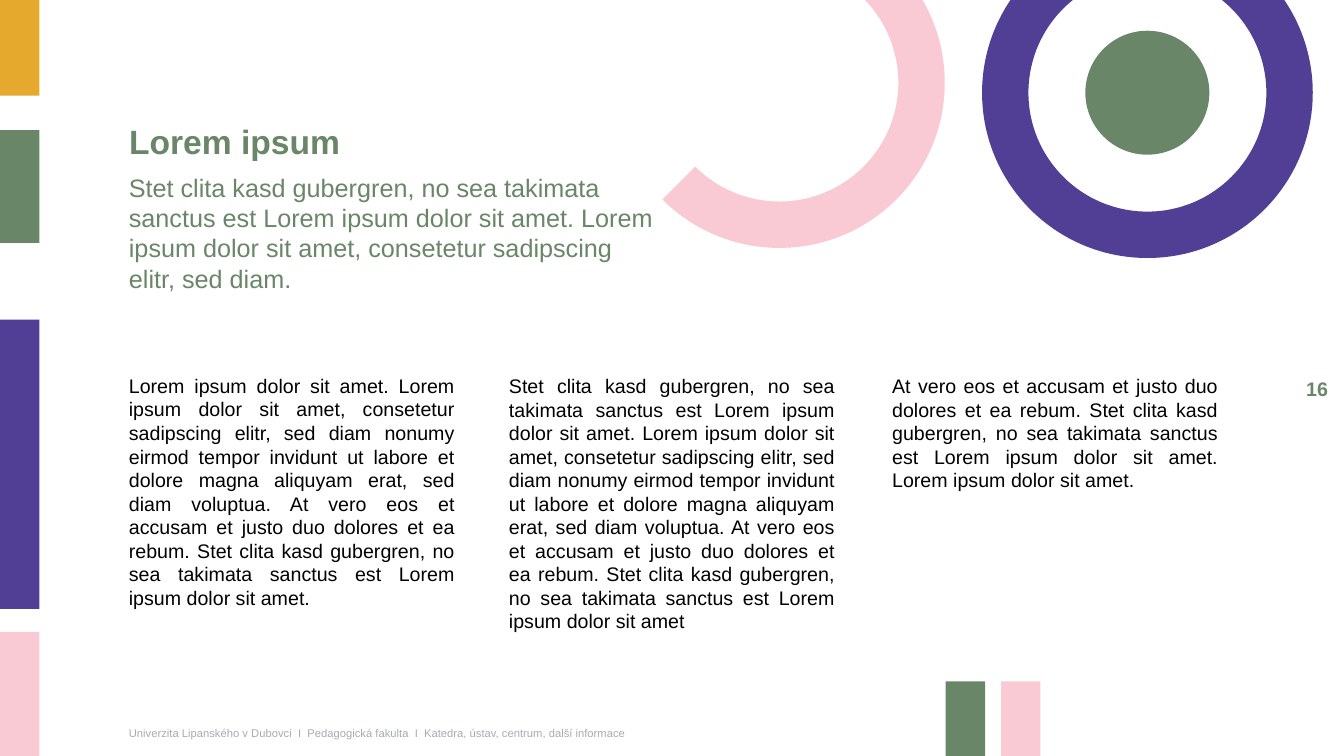
from math import asin, cos, pi, sin, tan

from lxml import etree
from pptx import Presentation
from pptx.dml.color import RGBColor
from pptx.enum.shapes import MSO_SHAPE
from pptx.enum.text import MSO_ANCHOR, MSO_AUTO_SIZE, PP_ALIGN
from pptx.oxml.ns import qn
from pptx.util import Inches, Pt

RECT, OVAL = MSO_SHAPE.RECTANGLE, MSO_SHAPE.OVAL
TOP, MIDDLE = MSO_ANCHOR.TOP, MSO_ANCHOR.MIDDLE
LEFT, RIGHT, JUSTIFY = PP_ALIGN.LEFT, PP_ALIGN.RIGHT, PP_ALIGN.JUSTIFY
NO_FIT = MSO_AUTO_SIZE.NONE

GREEN = RGBColor(0x6A, 0x86, 0x68)
PINK = RGBColor(0xF9, 0xCA, 0xD4)
PURPLE = RGBColor(0x51, 0x3F, 0x95)
GOLD = RGBColor(0xE5, 0xAA, 0x2D)
GREY = RGBColor(0xA9, 0xAB, 0xAE)
BLACK = RGBColor(0, 0, 0)

BAR_W = 0.39
RING_OUTER, RING_INNER = 1.64, 1.18

INTRO = ("Stet clita kasd gubergren, no sea takimata sanctus est Lorem ipsum "
         "dolor sit amet. Lorem ipsum dolor sit amet, consetetur sadipscing "
         "elitr, sed diam.")
COLUMNS = [
    (1.18, 2.46,
     "Lorem ipsum dolor sit amet. Lorem ipsum dolor sit amet, consetetur "
     "sadipscing elitr, sed diam nonumy eirmod tempor invidunt ut labore et "
     "dolore magna aliquyam erat, sed diam voluptua. At vero eos et accusam et "
     "justo duo dolores et ea rebum. Stet clita kasd gubergren, no sea takimata "
     "sanctus est Lorem ipsum dolor sit amet."),
    (4.95, 2.69,
     "Stet clita kasd gubergren, no sea takimata sanctus est Lorem ipsum dolor "
     "sit amet. Lorem ipsum dolor sit amet, consetetur sadipscing elitr, sed "
     "diam nonumy eirmod tempor invidunt ut labore et dolore magna aliquyam "
     "erat, sed diam voluptua. At vero eos et accusam et justo duo dolores et "
     "ea rebum. Stet clita kasd gubergren, no sea takimata sanctus est Lorem "
     "ipsum dolor sit amet"),
    (8.75, 1.28,
     "At vero eos et accusam et justo duo dolores et ea rebum. Stet clita kasd "
     "gubergren, no sea takimata sanctus est Lorem ipsum dolor sit amet. Lorem "
     "ipsum dolor sit amet."),
]
FOOTER = ("Univerzita Lipanského v Dubovci  I  Pedagogická fakulta  I  "
          "Katedra, ústav, centrum, další informace")


def paint(shape, color):
    shape.fill.solid()
    shape.fill.fore_color.rgb = color
    shape.line.fill.background()
    shape.shadow.inherit = False


def add_solid(s, kind, x, y, w, h, color):
    paint(s.shapes.add_shape(kind, Inches(x), Inches(y), Inches(w), Inches(h)), color)


def arc_points(cx, cy, radius, end):
    """Bezier points clockwise from the slide's top edge, split at each quarter turn."""
    cut = -asin(cy / radius)
    end = pi - cut if end is None else end
    stops = [cut] + [a for a in (0, pi / 2, pi) if a < end] + [end]
    points = [(cx + radius * cos(cut), cy + radius * sin(cut))]
    for a, b in zip(stops, stops[1:]):
        k = 4 / 3 * tan((b - a) / 4)
        for u, v in [(cos(a) - k * sin(a), sin(a) + k * cos(a)),
                     (cos(b) + k * sin(b), sin(b) - k * cos(b)),
                     (cos(b), sin(b))]:
            points.append((cx + radius * u, cy + radius * v))
    return [(Inches(x), Inches(y)) for x, y in points]


def curve_lines(lines):
    """Turn every three line segments into one cubic curve."""
    for i in range(0, len(lines), 3):
        curve = etree.Element(qn("a:cubicBezTo"))
        lines[i].addprevious(curve)
        for line in lines[i:i + 3]:
            curve.append(line[0])
            line.getparent().remove(line)


def add_ring(s, cx, cy, color, end=None):
    """Draw a ring cut at the slide's top edge; end is an optional angle at its left."""
    outer = arc_points(cx, cy, RING_OUTER, end)
    inner = arc_points(cx, cy, RING_INNER, end)[::-1]
    builder = s.shapes.build_freeform(*outer[0])
    builder.add_line_segments(outer[1:] + inner, close=True)
    ring = builder.convert_to_shape()
    lines = list(ring._element.iter(qn("a:lnTo")))
    curve_lines(lines[:len(outer) - 1])
    curve_lines(lines[len(outer):len(outer) + len(inner) - 1])
    paint(ring, color)


def format_text(tf, text, size, color, bold=False, align=LEFT, anchor=TOP,
                spacing=1.0, before=0, wrap=True):
    tf.text = text
    tf.word_wrap = wrap
    tf.auto_size = NO_FIT
    tf.vertical_anchor = anchor
    p = tf.paragraphs[0]
    p.alignment = align
    p.line_spacing = spacing
    p.space_before = Pt(before)
    p.font.name = "Arial"
    p.font.size = Pt(size)
    p.font.bold = bold
    p.font.color.rgb = color


def add_text(s, x, y, w, h, text, size, color, **style):
    box = s.shapes.add_textbox(Inches(x), Inches(y), Inches(w), Inches(h))
    format_text(box.text_frame, text, size, color, **style)


def add_heading(s, x, y, w):
    title = s.shapes.title
    title.left, title.top = Inches(x), Inches(y)
    title.width, title.height = Inches(w), Inches(0.48)
    format_text(title.text_frame, "Lorem ipsum", 24, GREEN, bold=True,
                anchor=MIDDLE, spacing=0.9)
    add_text(s, x, y + 0.48, w, 1.47, INTRO, 18, GREEN, before=3)


def add_columns(s, y, w):
    for x, h, text in COLUMNS:
        add_text(s, x, y, w, h, text, 14, BLACK, align=JUSTIFY, before=3)


def add_side_bars(s, x):
    for y, h, color in [(0, 0.95, GOLD), (1.29, 1.12, GREEN),
                        (3.17, 2.87, PURPLE), (6.27, 1.23, PINK)]:
        add_solid(s, RECT, x, y, BAR_W, h, color)


def add_bottom_bars(s, x, y):
    for i, color in enumerate([GREEN, PINK]):
        add_solid(s, RECT, x + i * 0.55, y, BAR_W, 0.74, color)


def add_circles(s, cx, cy):
    """Place the purple target at the given centre and the open pink ring left of it."""
    dot = 1.23
    add_ring(s, cx, cy, PURPLE)
    add_solid(s, OVAL, cx - dot / 2, cy - dot / 2, dot, dot, GREEN)
    add_ring(s, cx - 3.65, cy - 0.1, PINK, end=pi * 3 / 4)


def main():
    prs = Presentation()
    prs.slide_width, prs.slide_height = Inches(13.33), Inches(7.5)
    s = prs.slides.add_slide(prs.slide_layouts[5])
    add_text(s, 1.18, 7.15, 5.49, 0.24, FOOTER, 8, GREY, anchor=MIDDLE)
    add_text(s, 12.83, 3.69, 0.44, 0.34, "16", 14, GREEN, bold=True,
             align=RIGHT, anchor=MIDDLE, wrap=False)
    add_columns(s, 3.66, 3.43)
    add_heading(s, 1.18, 1.18, 5.49)
    add_bottom_bars(s, 9.38, 6.76)
    add_side_bars(s, 0)
    add_circles(s, 11.38, 0.92)
    prs.save("out.pptx")


if __name__ == "__main__":
    main()
